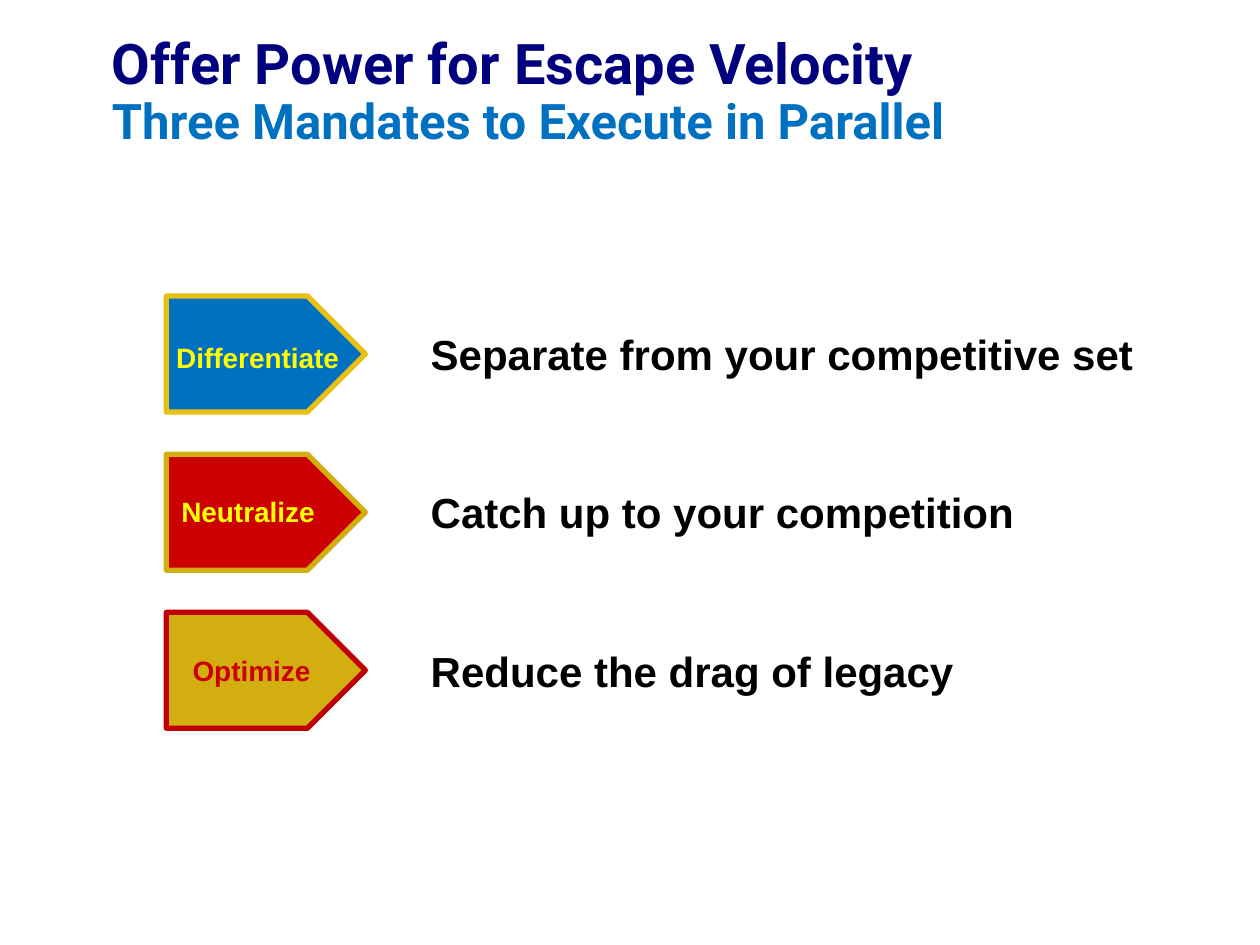
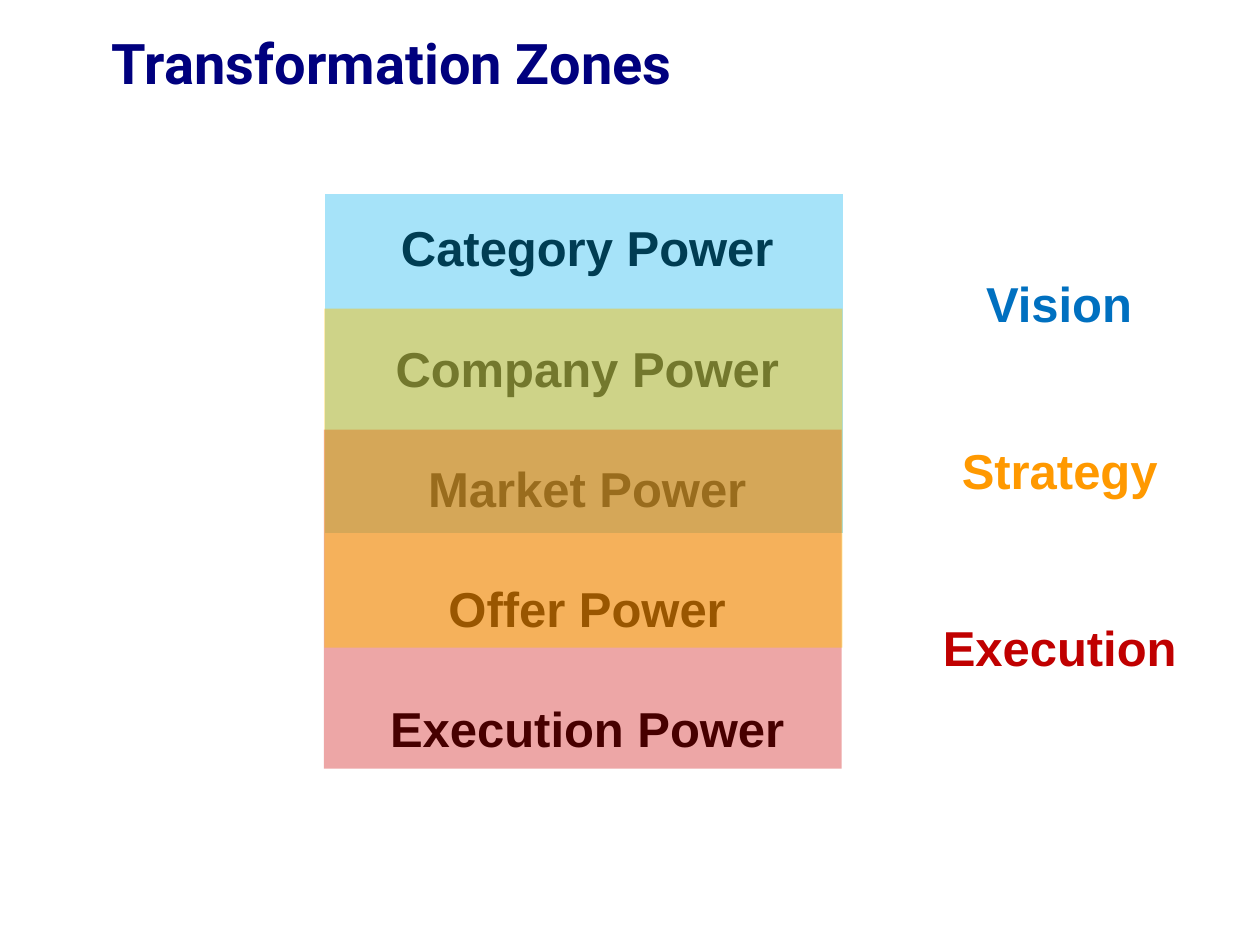
from dataclasses import dataclass
from typing import Any

from lxml import etree
from pptx import Presentation
from pptx import util as u
from pptx.dml.color import RGBColor
from pptx.enum import shapes, text
from pptx.oxml.ns import qn

COLOURS = {
    "navy": "00007E", "blue": "0070C0", "sky": "00B0F0", "red": "CC0000",
    "crimson": "C00000", "bright_gold": "E8C014", "gold": "D2AE11",
    "amber": "FFC000", "orange": "FF9900", "yellow": "FFFF00", "black": "000000",
}

# The grid: 100 columns by 75 rows on a 10 by 7.5 inch page
PAGE_WIDTH, PAGE_HEIGHT = u.Inches(10), u.Inches(7.5)
COLUMN, ROW = PAGE_WIDTH / 100, PAGE_HEIGHT / 75


@dataclass(frozen=True)
class Area:
    column: float
    row: float
    columns: float
    rows: float

    def lengths(self) -> tuple[int, int, int, int]:
        return (round(self.column * COLUMN), round(self.row * ROW),
                round(self.columns * COLUMN), round(self.rows * ROW))


@dataclass(frozen=True)
class Style:
    size: float
    colour: str
    font: str = "Arial"


@dataclass(frozen=True)
class Mandate:
    label: str
    label_area: Area  # measured from the top of its arrow
    label_colour: str
    fill: str
    line: str
    statement: str
    statement_columns: float


@dataclass(frozen=True)
class Zone:
    colour: str
    opacity: int
    column: float
    row: float


@dataclass(frozen=True)
class Stage:
    name: str
    colour: str
    area: Area


TITLE_AREA = Area(7.9, 2.4, 87.8, 10.8)
TITLE = Style(32, "navy", "Roboto")
SUBTITLE = Style(28, "blue", "Roboto")

ARROW_LEFT, ARROW_TOP, ARROW_PITCH = 13.2, 23.5, 12.55
ARROW_COLUMNS, ARROW_ROWS = 15.8, 9.2
MANDATES = [
    Mandate("Differentiate", Area(13, 3, 15.1, 3.7), "yellow", "blue",
            "bright_gold", "Separate from your competitive set", 58.3),
    Mandate("Neutralize", Area(13.4, 2.7, 12.8, 3.7), "yellow", "red",
            "gold", "Catch up to your competition", 48.7),
    Mandate("Optimize", Area(14.3, 2.8, 11.5, 3.7), "red", "gold",
            "crimson", "Reduce the drag of legacy", 43.9),
]

POWERS = ["Category Power", "Company Power", "Market Power", "Offer Power",
          "Execution Power"]
ZONE_COLUMNS, ZONE_ROWS = 41.1, 26.9
ZONES = [
    Zone("sky", 35, 25.8, 15.4),
    Zone("red", 35, 25.7, 34.1),
    Zone("amber", 45, 25.75, 24.5),
]
STAGES = [
    Stage("Vision", "blue", Area(77.2, 21.2, 13.7, 5.7)),
    Stage("Strategy", "orange", Area(75.2, 34.5, 17.8, 5.7)),
    Stage("Execution", "crimson", Area(73.7, 48.5, 20.8, 5.7)),
]


def rgb(name: str) -> RGBColor:
    return RGBColor.from_string(COLOURS[name])


def apply(target: Any, values: dict[str, Any]) -> None:
    for name, value in values.items():
        setattr(target, name, value)


def add_span(para: Any, words: str, style: Style) -> None:
    span = para.add_run()
    span.text = words
    apply(span.font, {"name": style.font, "size": u.Pt(style.size), "bold": True})
    span.font.color.rgb = rgb(style.colour)


def add_text(parent: Any, area: Area, lines: list[str], style: Style,
             wrap: bool = False, align: Any = text.PP_ALIGN.LEFT,
             gap: float = 0) -> Any:
    """Add a text box with one paragraph per line, gap points apart."""
    frame = parent.add_textbox(*area.lengths()).text_frame
    apply(frame, {"word_wrap": wrap, "vertical_anchor": text.MSO_ANCHOR.TOP})
    for index, line in enumerate(lines):
        para = frame.add_paragraph() if index else frame.paragraphs[0]
        para.alignment = align
        if index and gap:
            para.space_before = u.Pt(gap)
        add_span(para, line, style)
    return frame


def add_block(parent: Any, kind: Any, area: Area, fill: str) -> Any:
    block = parent.add_shape(kind, *area.lengths())
    block.shadow.inherit = False
    block.fill.solid()
    block.fill.fore_color.rgb = rgb(fill)
    return block


def add_page(deck: Any, title: str, subtitle: str = "") -> Any:
    page = deck.slides.add_slide(deck.slide_layouts[6])
    para = add_text(page.shapes, TITLE_AREA, [title], TITLE, wrap=True).paragraphs[0]
    para.line_spacing = 0.9
    if subtitle:
        para.add_line_break()
        add_span(para, subtitle, SUBTITLE)
    return page


def add_mandate(page: Any, mandate: Mandate, top: float) -> None:
    add_text(page.shapes, Area(33.2, top + 2.1, mandate.statement_columns, 5.1),
             [mandate.statement], Style(24, "black"))
    group = page.shapes.add_group_shape().shapes
    arrow = add_block(group, shapes.MSO_SHAPE.PENTAGON,
                      Area(ARROW_LEFT, top, ARROW_COLUMNS, ARROW_ROWS), mandate.fill)
    arrow.line.color.rgb = rgb(mandate.line)
    arrow.line.width = u.Pt(3)
    offset = mandate.label_area
    add_text(group, Area(offset.column, top + offset.row, offset.columns, offset.rows),
             [mandate.label], Style(16, mandate.label_colour))


def add_zone(page: Any, zone: Zone) -> None:
    area = Area(zone.column, zone.row, ZONE_COLUMNS, ZONE_ROWS)
    block = add_block(page.shapes, shapes.MSO_SHAPE.RECTANGLE, area, zone.colour)
    block.line.fill.background()
    colour = block.fill._xPr.find(qn("a:solidFill"))[0]
    etree.SubElement(colour, qn("a:alpha")).set("val", str(zone.opacity * 1000))


def main() -> None:
    deck = Presentation()
    apply(deck, {"slide_width": PAGE_WIDTH, "slide_height": PAGE_HEIGHT})

    # Three mandates
    page = add_page(deck, "Offer Power for Escape Velocity",
                    "Three Mandates to Execute in Parallel")
    for index, mandate in enumerate(MANDATES):
        add_mandate(page, mandate, ARROW_TOP + index * ARROW_PITCH)

    # Overlapping zones tint the list of powers beneath them
    page = add_page(deck, "Transformation Zones")
    add_text(page.shapes, Area(26.2, 16.8, 40.8, 43.2), POWERS, Style(28, "black"),
             wrap=True, align=text.PP_ALIGN.CENTER, gap=35.1)
    for zone in ZONES:
        add_zone(page, zone)
    for stage in STAGES:
        add_text(page.shapes, stage.area, [stage.name], Style(28, stage.colour),
                 align=text.PP_ALIGN.CENTER)

    deck.save("out.pptx")


if __name__ == "__main__":
    main()
